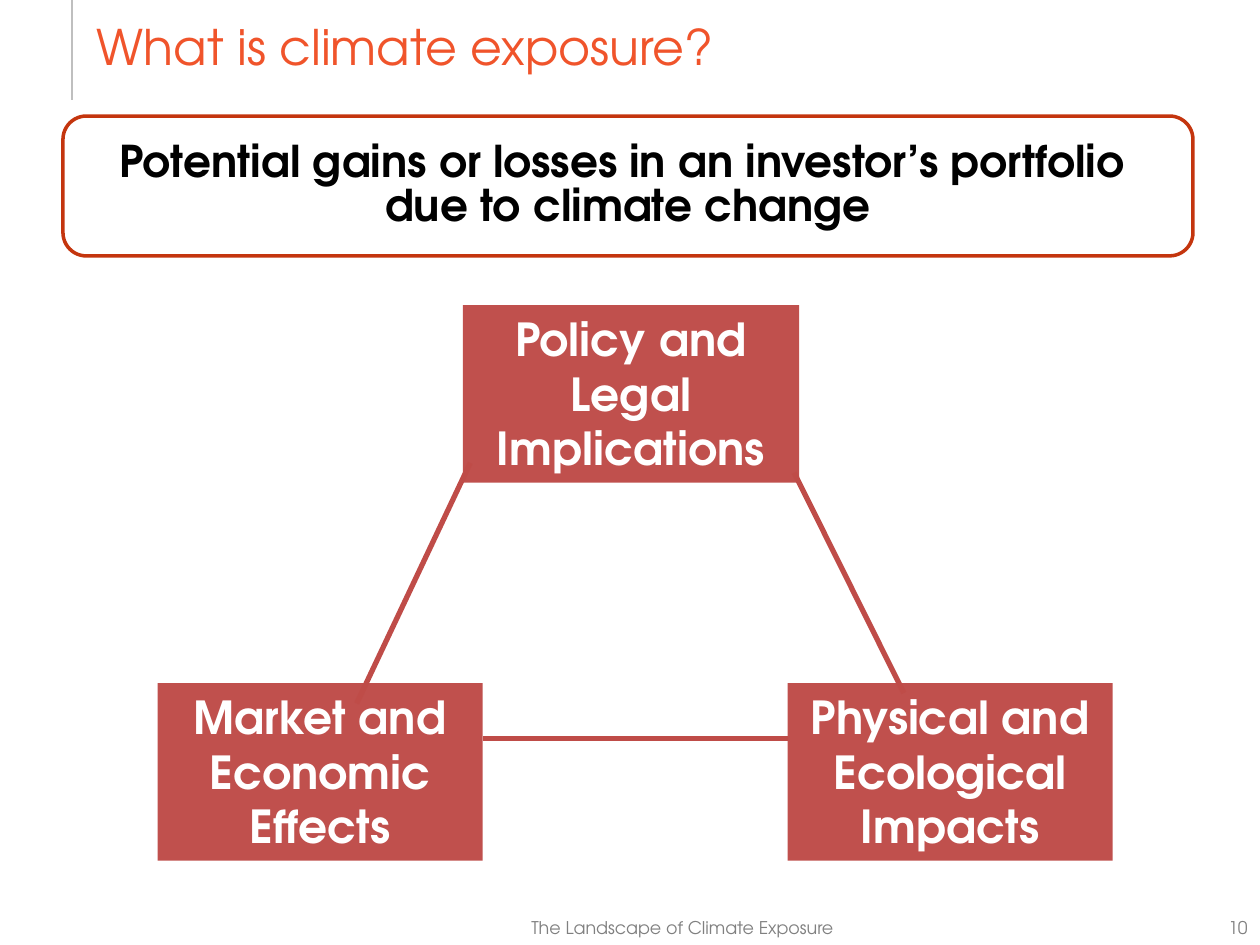
from lxml import etree
from pptx import Presentation
from pptx.dml.color import RGBColor
from pptx.enum.shapes import MSO_CONNECTOR, MSO_SHAPE
from pptx.enum.text import MSO_ANCHOR, PP_ALIGN
from pptx.oxml.ns import qn
from pptx.util import Cm, Pt

FONT = "TeX Gyre Adventor"
LEFT, CENTER, RIGHT = PP_ALIGN.LEFT, PP_ALIGN.CENTER, PP_ALIGN.RIGHT
TOP, MIDDLE = MSO_ANCHOR.TOP, MSO_ANCHOR.MIDDLE
RECTANGLE, ROUNDED = MSO_SHAPE.RECTANGLE, MSO_SHAPE.ROUNDED_RECTANGLE
STRAIGHT, CURVE = MSO_CONNECTOR.STRAIGHT, MSO_CONNECTOR.CURVE


def color(value):
    return RGBColor.from_string(value)


def write(shape, lines, size, ink, align=CENTER, anchor=TOP, bold=False, spacing=None):
    frame = shape.text_frame
    frame.word_wrap = True
    frame.vertical_anchor = anchor
    paragraph = frame.paragraphs[0]
    paragraph.alignment = align
    paragraph.line_spacing = spacing
    for index, line in enumerate(lines):
        if index:
            paragraph.add_line_break()
        run = paragraph.add_run()
        run.text = line
        run.font.name = FONT
        run.font.size = Pt(size)
        run.font.bold = bold
        run.font.color.rgb = color(ink)


def add_box(slide, kind, left, top, width, height, fill):
    shape = slide.shapes.add_shape(kind, Cm(left), Cm(top), Cm(width), Cm(height))
    shape.shadow.inherit = False
    shape.fill.solid()
    shape.fill.fore_color.rgb = color(fill)
    shape.line.fill.background()
    return shape


def add_line(slide, kind, start, end, ink, width):
    points = [Cm(value) for value in (*start, *end)]
    connector = slide.shapes.add_connector(kind, *points)
    connector.line.color.rgb = color(ink)
    connector.line.width = Pt(width)
    etree.SubElement(connector._element.spPr, qn("a:effectLst"))


def add_header(slide, left, top, width, height):
    add_line(slide, STRAIGHT, (left, top), (left, top + height), "BFBFBF", 1.25)
    title = slide.shapes.title
    title.left, title.top = Cm(left + 0.25), Cm(top + 0.2)
    title.width, title.height = Cm(width - 0.25), Cm(1.85)
    write(title, ["What is climate exposure?"], 28, "F0542B", LEFT)


def add_definition(slide, left, top, width, height):
    banner = add_box(slide, ROUNDED, left, top, width, height, "FFFFFF")
    banner.line.color.rgb = color("C4350E")
    banner.line.width = Pt(2)
    lines = ["Potential gains or losses in an investor’s portfolio ", "due to climate change"]
    write(banner, lines, 25, "000000", anchor=MIDDLE, bold=True, spacing=0.85)


def add_triangle(slide, left, top, width, height):
    box_height, top_width, base_width = 3.58, 6.78, 6.55
    base = height - box_height
    right = width - base_width
    factors = [
        (["Policy and Legal Implications"], 6.15, 0, top_width),
        (["Market and Economic", "Effects"], 0, base, base_width),
        (["Physical and Ecological Impacts"], right, base, base_width),
    ]
    for lines, x, y, box_width in factors:
        box = add_box(slide, RECTANGLE, left + x, top + y, box_width, box_height, "C0504D")
        write(box, lines, 26, "FFFFFF", bold=True)

    links = [
        (STRAIGHT, (6.3, 3.18), (4.01, 8.03)),
        (STRAIGHT, (12.83, 3.38), (15.04, 7.82)),
        (CURVE, (right, 8.74), (base_width, 8.74)),
    ]
    for kind, (x1, y1), (x2, y2) in links:
        start, end = (left + x1, top + y1), (left + x2, top + y2)
        add_line(slide, kind, start, end, "BF4C48", 3)


def add_footer(slide, left, top, width, height):
    parts = [
        ("The Landscape of Climate Exposure", 0, 10.59, CENTER),
        ("10", width - 4.32, 4.32, RIGHT),
    ]
    for text, x, part_width, align in parts:
        box = slide.shapes.add_textbox(Cm(left + x), Cm(top), Cm(part_width), Cm(height))
        write(box, [text], 10, "808080", align)


def main():
    presentation = Presentation()
    presentation.slide_width, presentation.slide_height = Cm(25.4), Cm(19.05)
    slide = presentation.slides.add_slide(presentation.slide_layouts[5])
    add_footer(slide, 8.46, 18.36, 16.94, 0.69)
    add_header(slide, 1.45, 0, 22.27, 2.01)
    add_definition(slide, 1.27, 2.34, 22.78, 2.82)
    add_triangle(slide, 3.18, 6.15, 19.25, 11.2)
    presentation.save("out.pptx")


if __name__ == "__main__":
    main()
